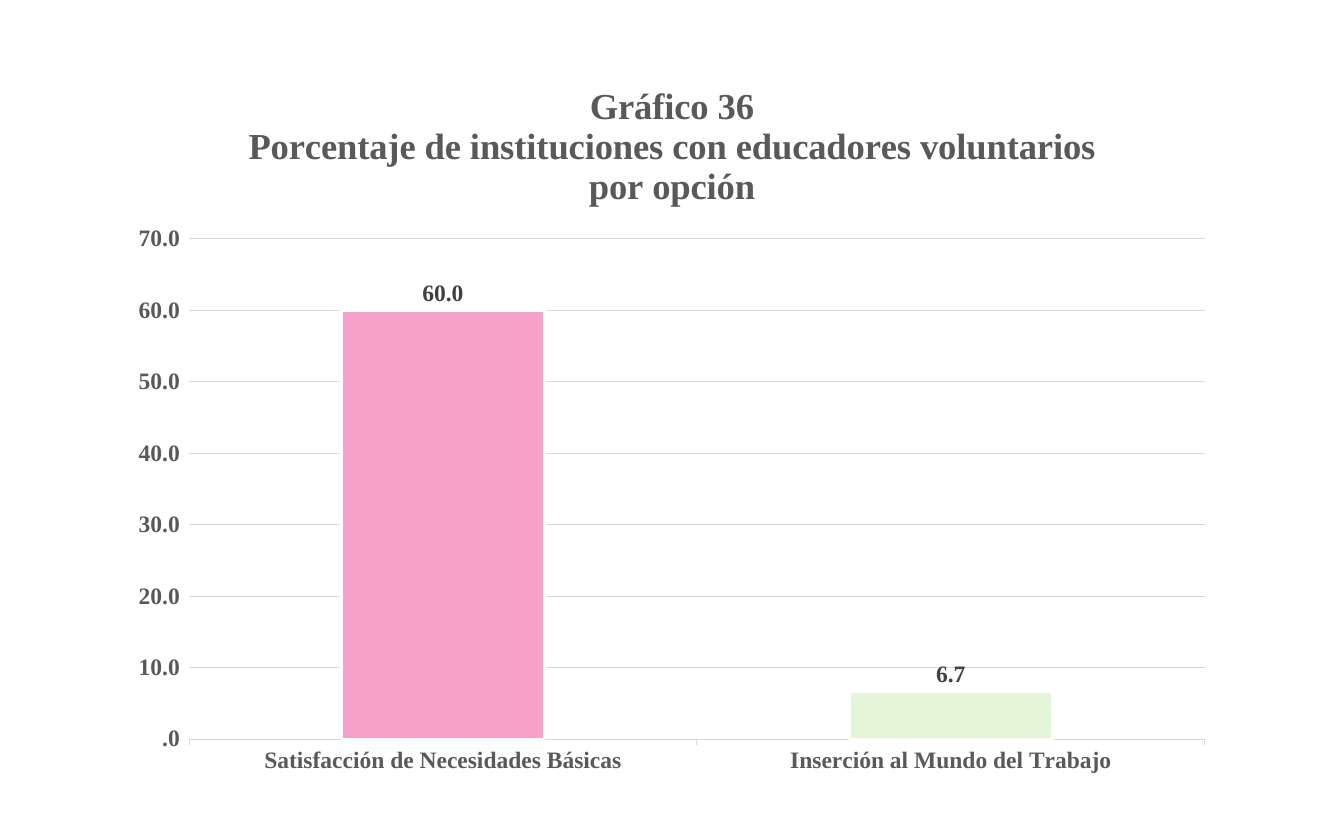
from lxml.etree import SubElement
from pptx import Presentation
from pptx.chart.data import CategoryChartData
from pptx.dml.color import RGBColor
from pptx.enum.chart import XL_CHART_TYPE as ChartType, XL_LABEL_POSITION as LabelPos, XL_TICK_MARK as Tick
from pptx.oxml.ns import qn
from pptx.util import Pt

PX = 9144  # EMU per pixel, 100 pixels to the inch
FONT = "Times New Roman"
COLORS = {"text": "595959", "label": "404040", "grid": "D9D9D9", "edge": "FFFFFF",
          "series": "7FD13B", "basic_needs": "F7A1CA", "work": "E5F6D8"}


def rgb(name):
    return RGBColor.from_string(COLORS[name])


def style(target, text=None, size=18, color="text", bold=True):
    if text is not None:
        target.text = text
    font = target.font
    font.name, font.size, font.bold = FONT, Pt(size), bold
    font.color.rgb = rgb(color)


prs = Presentation()
prs.slide_width, prs.slide_height = 1429 * PX, 890 * PX
slide = prs.slides.add_slide(prs.slide_layouts[6])

# Data
data = CategoryChartData(number_format="####.0")
data.categories = ["Satisfacción de Necesidades Básicas", "Inserción al Mundo del Trabajo"]
data.add_series("Series 1", (60, 6.7))
left, top, width, height = 124, 67, 1181, 772
chart = slide.shapes.add_chart(ChartType.COLUMN_CLUSTERED, left * PX, top * PX,
                               width * PX, height * PX, data).chart
chart.has_legend = False
chart.font.name, chart.font.size = FONT, Pt(10)

# Title
title = chart.chart_title.text_frame
style(title.paragraphs[0].add_run(), "Gráfico 36", size=28)
style(title.add_paragraph().add_run(),
      "Porcentaje de instituciones con educadores voluntarios por opción", size=28)
chart.chart_title.include_in_layout = False

# Axes
categories, values = chart.category_axis, chart.value_axis
values.minimum_scale, values.maximum_scale, values.major_unit = 0, 70, 10
values.has_major_gridlines = True
values.tick_labels.number_format = "####.0"
values.tick_labels.number_format_is_linked = False
for axis in (categories, values):
    axis.major_tick_mark = Tick.OUTSIDE
    style(axis.tick_labels)
for line in (categories.format.line, values.major_gridlines.format.line):
    line.color.rgb = rgb("grid")
    line.width = Pt(0.75)
values.format.line.fill.background()

# Columns
plot = chart.plots[0]
plot.gap_width = 150
plot.vary_by_categories = False
series = plot.series[0]
series.format.fill.solid()
series.format.fill.fore_color.rgb = rgb("series")
series.format.line.color.rgb = rgb("edge")
series.format.line.width = Pt(2)
for index, name in enumerate(("basic_needs", "work")):
    column = series.points[index].format
    column.fill.solid()
    column.fill.fore_color.rgb = rgb(name)
    column.line.color.rgb = rgb("edge")
    column.line.width = Pt(2)

# Value labels
labels = series.data_labels
labels.show_value = True
labels.number_format = "####.0"
labels.number_format_is_linked = False
labels.position = LabelPos.OUTSIDE_END
style(labels, color="label")

# Plot area position, as fractions of the chart
plot_area = plot._element.getparent()
layout = plot_area.find(qn("c:layout"))
if layout is None:
    layout = plot_area.makeelement(qn("c:layout"))
    plot_area.insert(0, layout)
manual = SubElement(layout, qn("c:manualLayout"))
for tag, setting in (("layoutTarget", "inner"), ("xMode", "edge"), ("yMode", "edge"),
                     ("x", (201 - left) / width), ("y", (254 - top) / height),
                     ("w", 1080 / width), ("h", 532 / height)):
    SubElement(manual, qn(f"c:{tag}")).set("val", f"{setting}")

prs.save("out.pptx")
